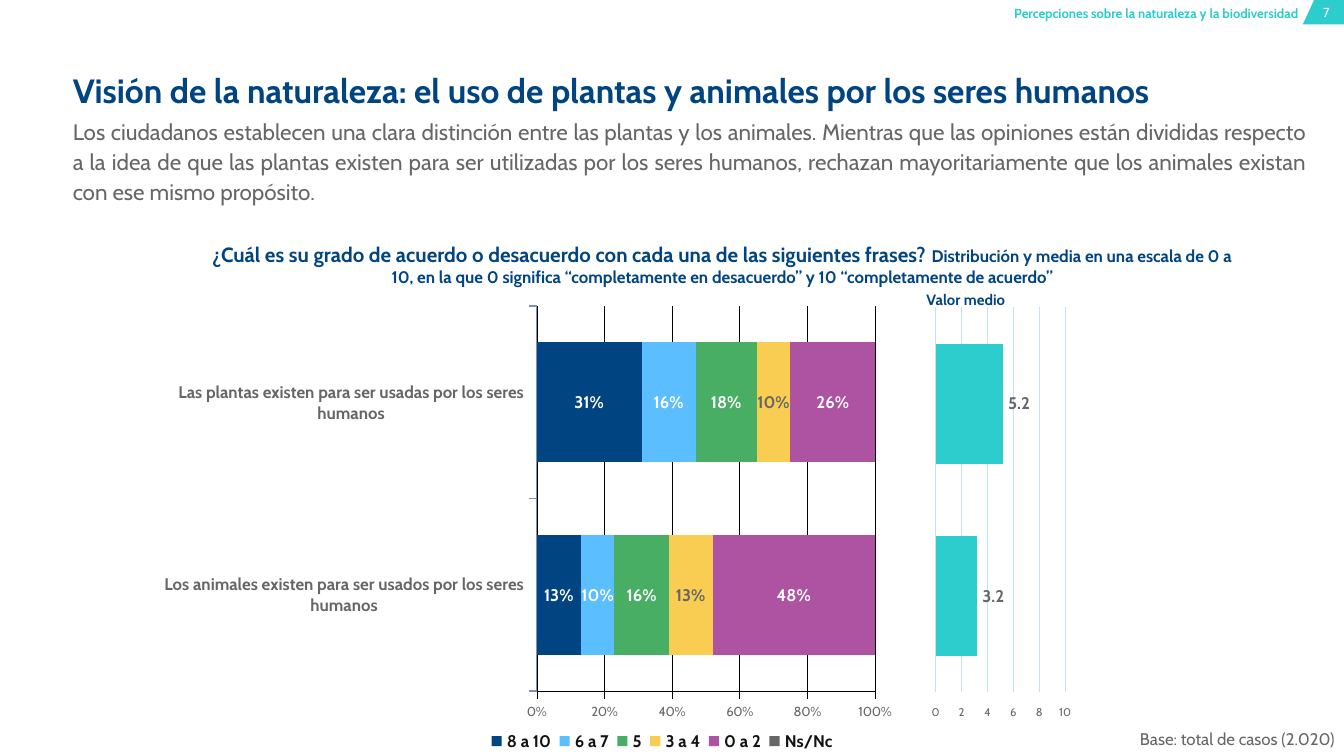
from dataclasses import dataclass

from lxml import etree
from pptx import Presentation
from pptx.chart.data import CategoryChartData
from pptx.dml.color import RGBColor
from pptx.enum import chart as ch
from pptx.enum import text as tx
from pptx.oxml.ns import qn
from pptx.util import Pt


@dataclass(frozen=True)
class Theme:
    font: str = "Cabin"
    navy: str = "004481"
    aqua: str = "2DCCCD"
    gray: str = "666666"
    ink: str = "121212"
    white: str = "FFFFFF"
    black: str = "000000"
    sky: str = "5BBEFF"
    green: str = "48AE64"
    gold: str = "F8CD51"
    plum: str = "AD53A1"
    axis: str = "8090B0"
    grid: str = "C5E1F8"
    head: float = 18
    body: float = 12
    ask: float = 11
    note: float = 9
    sub: float = 8
    small: float = 7
    tick: float = 6


T = Theme()
LEFT, RIGHT = tx.PP_ALIGN.LEFT, tx.PP_ALIGN.RIGHT
MID, FULL = tx.PP_ALIGN.CENTER, tx.PP_ALIGN.JUSTIFY
SCALE = [
    ("8 a 10", (0.13, 0.31), T.navy, T.white),
    ("6 a 7", (0.10, 0.16), T.sky, T.white),
    ("5", (0.16, 0.18), T.green, T.white),
    ("3 a 4", (0.13, 0.10), T.gold, T.gray),
    ("0 a 2", (0.48, 0.26), T.plum, T.white),
    ("Ns/Nc", (0, 0), T.gray, None),
]
ITEMS = ["Los animales existen para ser usados por los seres humanos",
         "Las plantas existen para ser usadas por los seres humanos"]


def style(font, size, color, bold=False):
    font.name, font.size, font.bold = T.font, Pt(size), bold
    font.color.rgb = RGBColor.from_string(color)


def place(shape, box):
    shape.left, shape.top, shape.width, shape.height = map(Pt, box)


def fill(frame, runs, align, inset=0):
    """Write (text, size, color, bold) runs as one paragraph."""
    frame.word_wrap = True
    frame.auto_size = tx.MSO_AUTO_SIZE.NONE
    frame.vertical_anchor = tx.MSO_ANCHOR.TOP
    frame.margin_left = frame.margin_right = Pt(2 * inset)
    frame.margin_top = frame.margin_bottom = Pt(inset)
    para = frame.paragraphs[0]
    para.alignment = align
    for words, *look in runs:
        run = para.add_run()
        run.text = words
        style(run.font, *look)
    return para


def label(slide, box, runs, align=LEFT, inset=0):
    frame = slide.shapes.add_textbox(*map(Pt, box)).text_frame
    return fill(frame, runs, align, inset)


def banner(slide, box):
    x, y, w, h = box
    tab = x + w - 22
    build = slide.shapes.build_freeform(Pt(tab + 6), Pt(y), scale=1)
    build.add_line_segments([(Pt(x + w), Pt(y)), (Pt(x + w), Pt(y + h)),
                             (Pt(tab), Pt(y + h))])
    flag = build.convert_to_shape()
    flag.shadow.inherit = False
    flag.fill.solid()
    flag.fill.fore_color.rgb = RGBColor.from_string(T.aqua)
    flag.line.fill.background()
    label(slide, (x, y + 2.9, w - 24.5, 9),
          [("Percepciones sobre la naturaleza y la biodiversidad",
            T.small, T.aqua, True)], RIGHT)
    label(slide, (tab + 7.6, y + 2.2, 10, 10),
          [("7", T.small, T.white)], MID)


def intro(slide, box):
    x, y, w, h = box
    title = slide.shapes.title
    place(title, (x, y, w - 27, 26.6))
    fill(title.text_frame,
         [("Visión de la naturaleza: el uso de plantas y animales por los "
           "seres humanos", T.head, T.navy, True)], LEFT)
    para = label(slide, (x, y + 24.5, w, h - 24.5), [(
        "Los ciudadanos establecen una clara distinción entre las plantas y "
        "los animales. Mientras que las opiniones están divididas respecto a "
        "la idea de que las plantas existen para ser utilizadas por los seres "
        "humanos, rechazan mayoritariamente que los animales existan con ese "
        "mismo propósito.", T.body, T.gray)], FULL)
    para.line_spacing = Pt(16)


def ask(slide, box):
    label(slide, box, [
        ("¿Cuál es su grado de acuerdo o desacuerdo con cada una de las "
         "siguientes frases? ", T.ask, T.navy, True),
        ("Distribución y media en una escala de 0 a 10, en la que 0 significa "
         "“completamente en desacuerdo” y 10 “completamente de acuerdo”",
         T.note, T.navy, True)], MID)


def layout(part, index, spot, inner=False):
    """Fix a chart part at x, y, w, h, as shares of the chart."""
    for old in part.findall(qn("c:layout")):
        part.remove(old)
    node = etree.Element(qn("c:layout"))
    part.insert(index, node)
    node = etree.SubElement(node, qn("c:manualLayout"))
    pairs = [("layoutTarget", "inner")] if inner else []
    pairs += [("xMode", "edge"), ("yMode", "edge")]
    pairs += zip("xywh", map(str, spot))
    for name, val in pairs:
        etree.SubElement(node, qn("c:" + name)).set("val", val)


def bars(slide, box, kind, cats, rows, spot, form, place_at):
    """Add a bar chart from (name, values, fill, label color) rows."""
    data = CategoryChartData()
    data.categories = cats
    for name, vals, *_ in rows:
        data.add_series(name, vals)
    chart = slide.shapes.add_chart(kind, *map(Pt, box), data).chart
    style(chart.font, T.note, T.gray, True)
    chart.has_title = chart.has_legend = False
    plot = chart.plots[0]
    plot.gap_width, plot.vary_by_categories = 60, False
    layout(plot._element.getparent(), 0, spot, True)
    for ser, (_, _, color, tint) in zip(plot.series, rows):
        ser.format.fill.solid()
        ser.format.fill.fore_color.rgb = RGBColor.from_string(color)
        if tint:
            tags = ser.data_labels
            tags.show_value, tags.position = True, place_at
            tags.number_format, tags.number_format_is_linked = form, False
            style(tags.font, T.note, tint, True)
    return chart


def stroke(line, color, width=0.25):
    line.color.rgb, line.width = RGBColor.from_string(color), Pt(width)


def scale(axis, top, step, form, size, grid):
    axis.minimum_scale, axis.maximum_scale, axis.major_unit = 0, top, step
    axis.has_major_gridlines = True
    stroke(axis.major_gridlines.format.line, grid)
    axis.major_tick_mark = ch.XL_TICK_MARK.OUTSIDE
    axis.tick_labels.number_format = form
    axis.tick_labels.number_format_is_linked = False
    style(axis.tick_labels.font, size, T.gray)


def shares(slide, box):
    chart = bars(slide, box, ch.XL_CHART_TYPE.BAR_STACKED, ITEMS, SCALE,
                 (0.44, 0.05, 0.36, 0.75), "0%",
                 ch.XL_LABEL_POSITION.CENTER)
    layout(chart.plots[0]._element.getparent(), 0,
           (0.437, 0.052, 0.359, 0.746), True)
    chart.plots[0].overlap = 100
    scale(chart.value_axis, 1, 0.2, "0%", T.small, T.black)
    stroke(chart.value_axis.format.line, T.black)
    axis = chart.category_axis
    axis.major_tick_mark = ch.XL_TICK_MARK.OUTSIDE
    stroke(axis.format.line, T.axis, 0.75)
    style(axis.tick_labels.font, T.note, T.gray, True)
    chart.has_legend = True
    key = chart.legend
    key.position = ch.XL_LEGEND_POSITION.BOTTOM
    key.include_in_layout = False
    style(key.font, T.note, T.ink, True)
    layout(key._element, 1, (0.38, 0.87, 0.38, 0.05))


def means(slide, box):
    x, y, w, h = box
    para = label(slide, (x + 65.2, y - 0.8, 113.8, 9.4),
                 [("Valor medio", T.sub, T.navy, True)])
    para.line_spacing = Pt(10)
    chart = bars(slide, box, ch.XL_CHART_TYPE.BAR_CLUSTERED, ["1", "2"],
                 [("Valor medio", (3.2, 5.2), T.aqua, T.gray)],
                 (0.445, 0.03, 0.44, 0.721), "#,##0.0",
                 ch.XL_LABEL_POSITION.OUTSIDE_END)
    scale(chart.value_axis, 10, 2, "#,##0", T.tick, T.grid)
    chart.value_axis.format.line.fill.background()
    chart.category_axis.visible = False


def main():
    deck = Presentation()
    deck.slide_width, deck.slide_height = Pt(720), Pt(405)
    slide = deck.slides.add_slide(deck.slide_layouts[5])
    banner(slide, (490, 0, 230, 13))
    intro(slide, (39, 37.4, 661.6, 73.5))
    ask(slide, (110.2, 129.8, 553, 39.6))
    shares(slide, (67, 149.6, 504.7, 276.5))
    label(slide, (592, 386.6, 130, 18),
          [("Base: total de casos (2.020)", T.note, T.gray)], RIGHT, 3.6)
    means(slide, (431.1, 156.2, 157.7, 285.8))
    deck.save("out.pptx")


if __name__ == "__main__":
    main()
